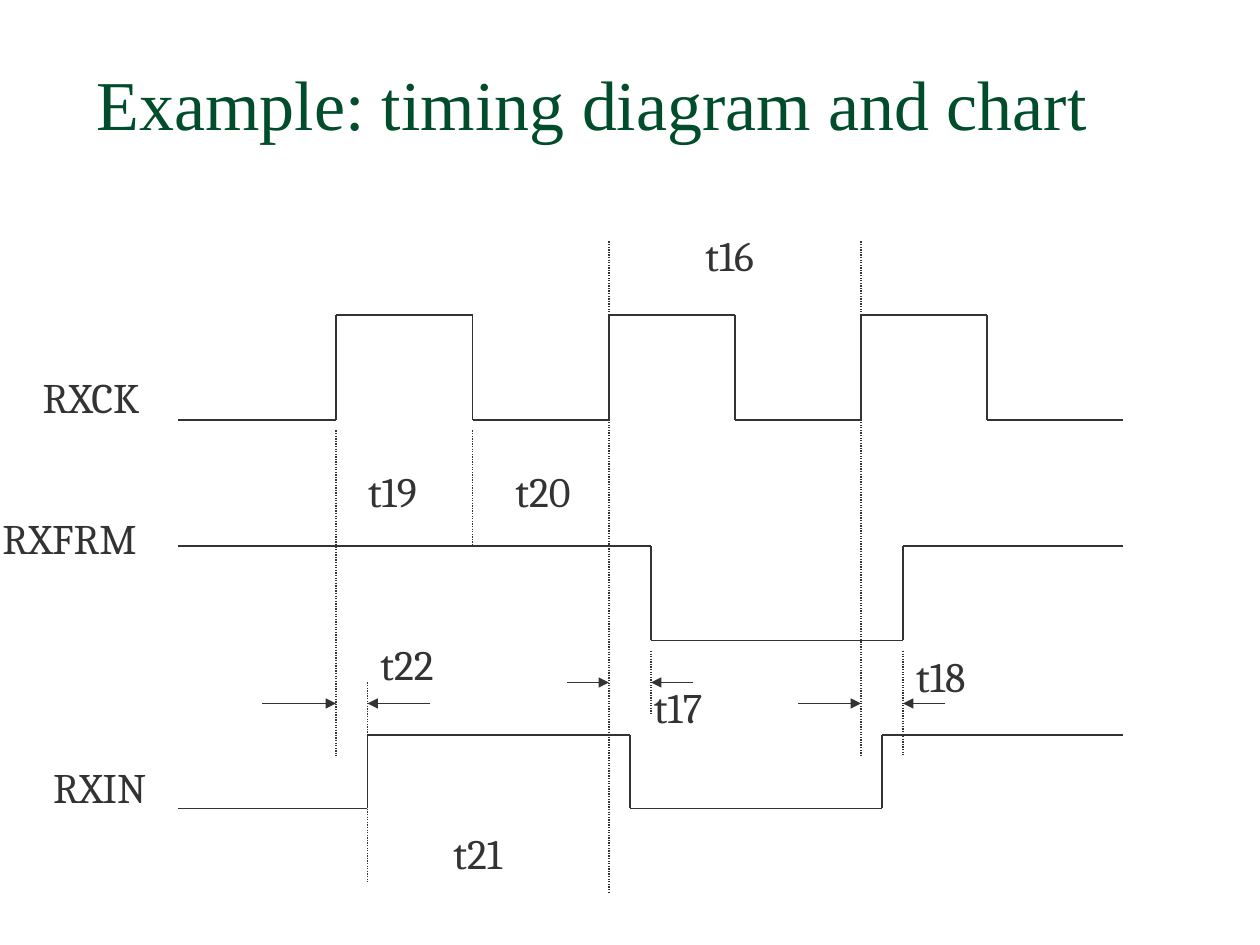
from lxml import etree
from pptx import Presentation
from pptx.dml.color import RGBColor
from pptx.enum.dml import MSO_LINE
from pptx.enum.shapes import MSO_CONNECTOR
from pptx.enum.text import MSO_ANCHOR, MSO_AUTO_SIZE, PP_ALIGN
from pptx.oxml.ns import qn
from pptx.util import Cm, Pt

STRAIGHT = MSO_CONNECTOR.STRAIGHT
DOTTED = MSO_LINE.ROUND_DOT
TOP, MIDDLE = MSO_ANCHOR.TOP, MSO_ANCHOR.MIDDLE
NO_AUTO_SIZE = MSO_AUTO_SIZE.NONE
LEFT = PP_ALIGN.LEFT
GREEN = RGBColor(0x00, 0x4C, 0x2B)
GRAY = RGBColor(0x33, 0x33, 0x33)

TITLE = "Example: timing diagram and chart"
TITLE_BOX = (1.9, 1.27, 21.6, 1.85)  # left, top, width, height in cm
TITLE_FONT = {"name": "Times New Roman", "size": Pt(40), "bold": False}
LABEL_FONT = {"name": "Cambria", "size": Pt(24)}

# The diagram lies on a grid of twelve steps to the inch.
GRID = 2.54 / 12
START, END = 17, 107

# Starting level, other level, and the places where the level changes
WAVES = {
    "RXCK": (40, 30, [32, 45, 58, 70, 82, 94]),
    "RXFRM": (52, 61, [62, 86]),
    "RXIN": (77, 70, [35, 60, 84]),
}
# x, top, bottom
GUIDES = [(32, 41, 72), (45, 41, 52), (58, 23, 85), (62, 62, 68),
          (82, 23, 72), (86, 62, 72), (35, 65, 84)]
# y, start of the arrow, place it points to
ARROWS = [(67, 41, 35), (67, 25, 32), (65, 66, 62), (65, 54, 58),
          (67, 90, 86), (67, 76, 82)]

LABEL_HEIGHT = 1.27
TIME_WIDTH = 1.57
# Text, left, top, width in cm
SIGNAL_LABELS = [("RXCK", 0.81, 7.52, 2.87), ("RXFRM", 0, 10.36, 3.48),
                 ("RXIN", 1.02, 15.37, 2.59)]
# Text, left, top in cm
TIME_LABELS = [("t16", 14.17, 4.65), ("t17", 13.13, 13.77),
               ("t18", 18.42, 13.13), ("t19", 7.37, 9.42),
               ("t20", 10.34, 9.42), ("t21", 9.09, 16.71),
               ("t22", 7.62, 12.9)]


def add_line(slide, start, end, dotted=False, arrow=False):
    x1, y1, x2, y2 = (Cm(value * GRID) for value in (*start, *end))
    connector = slide.shapes.add_connector(STRAIGHT, x1, y1, x2, y2)
    connector.line.color.rgb = GRAY
    connector.line.width = Pt(0.75)
    if dotted:
        connector.line.dash_style = DOTTED
    if arrow:
        outline = connector.line._get_or_add_ln()
        etree.SubElement(outline, qn("a:tailEnd"), type="triangle")
    etree.SubElement(connector._element.spPr, qn("a:effectLst"))


def add_wave(slide, level, other_level, edges):
    x = START
    for edge in edges:
        add_line(slide, (x, level), (edge, level))
        add_line(slide, (edge, level), (edge, other_level))
        x = edge
        level, other_level = other_level, level
    add_line(slide, (x, level), (END, level))


def write_text(shape, text, font_format, color, anchor):
    frame = shape.text_frame
    frame_format = {
        "word_wrap": True, "auto_size": NO_AUTO_SIZE,
        "vertical_anchor": anchor,
        "margin_left": Cm(0.05), "margin_right": Cm(0.05),
        "margin_top": Cm(0.13), "margin_bottom": Cm(0.13),
    }
    for name, value in frame_format.items():
        setattr(frame, name, value)
    paragraph = frame.paragraphs[0]
    paragraph.text = text
    paragraph.alignment = LEFT
    paragraph.line_spacing = 0.85
    paragraph.space_before = Pt(0)
    font = paragraph.runs[0].font
    for name, value in font_format.items():
        setattr(font, name, value)
    font.color.rgb = color


def add_label(slide, text, left, top, width=TIME_WIDTH):
    box = slide.shapes.add_textbox(Cm(left), Cm(top), Cm(width), Cm(LABEL_HEIGHT))
    write_text(box, text, LABEL_FONT, GRAY, TOP)


def main():
    presentation = Presentation()
    presentation.slide_width = Cm(25.4)
    presentation.slide_height = Cm(19.05)
    slide = presentation.slides.add_slide(presentation.slide_layouts[5])

    title = slide.shapes.title
    title.left, title.top, title.width, title.height = map(Cm, TITLE_BOX)
    write_text(title, TITLE, TITLE_FONT, GREEN, MIDDLE)

    for wave in WAVES.values():
        add_wave(slide, *wave)
    for x, top, bottom in GUIDES:
        add_line(slide, (x, top), (x, bottom), dotted=True)
    for y, start, target in ARROWS:
        add_line(slide, (start, y), (target, y), arrow=True)
    for label in SIGNAL_LABELS + TIME_LABELS:
        add_label(slide, *label)

    presentation.save("out.pptx")


if __name__ == "__main__":
    main()
